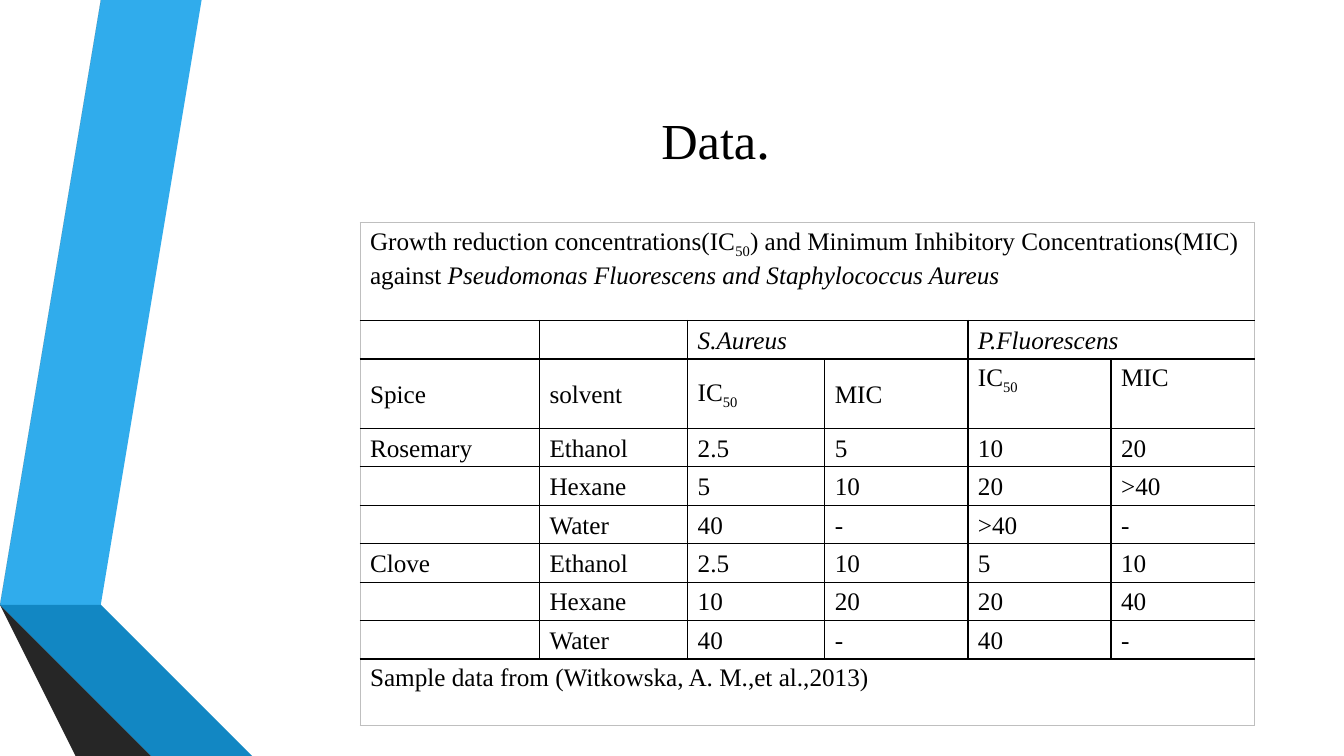
from lxml.etree import SubElement
from pptx import Presentation
from pptx.dml.color import RGBColor
from pptx.enum.text import MSO_ANCHOR as Anchor, PP_ALIGN as Align
from pptx.oxml.ns import qn
from pptx.util import Inches, Pt

BLACK = RGBColor(0x00, 0x00, 0x00)
EDGE_GREY = RGBColor(0xBF, 0xBF, 0xBF)
FONT = "Times New Roman"
PLAIN, SUB, ITALIC = "plain", "sub", "italic"

# Ribbon facets, back to front: colour and corners in inches
RIBBONS = [
    (RGBColor(0x30, 0xAC, 0xEC), [(0.5, 5.78), (0.77, 5.83), (1.73, 0), (1.45, 0)]),
    (RGBColor(0x59, 0x59, 0x59), [(1.39, 0), (1.11, 0), (0.16, 5.73), (0.44, 5.77)]),
    (RGBColor(0x26, 0x26, 0x26), [(0.16, 5.73), (1.45, 7.5), (1.51, 7.5)]),
    (RGBColor(0x0C, 0x5A, 0x82), [(0.5, 5.79), (2.08, 7.5), (2.14, 7.5)]),
    (RGBColor(0x12, 0x87, 0xC3), [(0.5, 5.78), (2.14, 7.5), (2.83, 7.5), (0.77, 5.83)]),
    (RGBColor(0x40, 0x40, 0x40), [(0.16, 5.73), (1.51, 7.5), (2.02, 7.5), (0.48, 5.83),
                                  (0.44, 5.77)]),
]

TITLE = [("Data", 36), (".", 40)]
TITLE_BOX = (1.62, 0.75, 10.96, 1.22)

CAPTION = [
    ("Growth reduction concentrations(IC", PLAIN), ("50", SUB),
    (") and Minimum Inhibitory Concentrations(MIC) against ", PLAIN),
    ("Pseudomonas Fluorescens and Staphylococcus Aureus", ITALIC),
]
IC50 = [("IC", PLAIN), ("50", SUB)]
ROWS = [
    [CAPTION, "", "", "", "", ""],
    ["", "", [("S.Aureus", ITALIC)], "", [("P.Fluorescens", ITALIC)], ""],
    ["Spice", "solvent", IC50, "MIC", IC50, "MIC"],
    ["Rosemary", "Ethanol", "2.5", "5", "10", "20"],
    ["", "Hexane", "5", "10", "20", ">40"],
    ["", "Water", "40", "-", ">40", "-"],
    ["Clove", "Ethanol", "2.5", "10", "5", "10"],
    ["", "Hexane", "10", "20", "20", "40"],
    ["", "Water", "40", "-", "40", "-"],
    ["Sample data from (Witkowska, A. M.,et al.,2013)", "", "", "", "", ""],
]
LAST_ROW, LAST_COL = len(ROWS) - 1, len(ROWS[0]) - 1
SPANS = [(0, 0, 5), (1, 2, 3), (1, 4, 5), (LAST_ROW, 0, 5)]  # row, first and last column
TOP_CELLS = {(0, 0), (2, 4), (2, 5), (LAST_ROW, 0)}
SPECIES_COL = 4  # a heavier rule divides the two species here

TABLE_LEFT, TABLE_TOP = 3.57, 2.21
COL_WIDTHS = [1.78, 1.47, 1.36, 1.42, 1.42, 1.42]
ROW_HEIGHTS = [0.97, 0.38, 0.69] + [0.38] * 6 + [0.66]


def add_run(paragraph, text, size, style=PLAIN):
    run = paragraph.add_run()
    run.text = text
    font = run.font
    font.name, font.size, font.color.rgb = FONT, Pt(size), BLACK
    font.italic = style == ITALIC
    if style == SUB:
        run._r.get_or_add_rPr().set("baseline", "-25000")


def add_ribbon(shapes, color, corners):
    builder = shapes.build_freeform(*corners[0], scale=Inches(1))
    builder.add_line_segments(corners[1:], close=True)
    ribbon = builder.convert_to_shape()
    ribbon.shadow.inherit = False
    ribbon.fill.solid()
    ribbon.fill.fore_color.rgb = color
    ribbon.line.fill.background()


def add_title(shapes):
    frame = shapes.add_textbox(*map(Inches, TITLE_BOX)).text_frame
    frame.word_wrap = True
    frame.vertical_anchor = Anchor.MIDDLE
    heading = frame.paragraphs[0]
    heading.alignment = Align.CENTER
    for text, size in TITLE:
        add_run(heading, text, size)


def set_borders(cell, row, col, right_col):
    """Grey hairlines on the table's outer edge, black rules inside."""
    outer = {"lnL": col == 0, "lnR": right_col == LAST_COL,
             "lnT": row == 0, "lnB": row == LAST_ROW}
    divider = {"lnL": col == SPECIES_COL, "lnR": right_col == SPECIES_COL - 1}
    properties = cell._tc.get_or_add_tcPr()
    for side, is_outer in outer.items():
        width = 0.75 if is_outer else 1.5 if divider.get(side) else 1
        line = SubElement(properties, qn("a:" + side), w=str(Pt(width)))
        fill = SubElement(line, qn("a:solidFill"))
        SubElement(fill, qn("a:srgbClr"), val=str(EDGE_GREY if is_outer else BLACK))


def add_data_table(shapes):
    table = shapes.add_table(
        len(ROWS), len(COL_WIDTHS), Inches(TABLE_LEFT), Inches(TABLE_TOP),
        Inches(sum(COL_WIDTHS)), Inches(sum(ROW_HEIGHTS))).table
    table.first_row = table.horz_banding = False
    for column, width in zip(table.columns, COL_WIDTHS):
        column.width = Inches(width)
    for table_row, height in zip(table.rows, ROW_HEIGHTS):
        table_row.height = Inches(height)
    for row, first, last in SPANS:
        table.cell(row, first).merge(table.cell(row, last))
    span_ends = {(row, first): last for row, first, last in SPANS}

    for row, entries in enumerate(ROWS):
        for col, entry in enumerate(entries):
            cell = table.cell(row, col)
            cell.margin_top = cell.margin_bottom = Inches(0.03)
            cell.vertical_anchor = Anchor.TOP if (row, col) in TOP_CELLS else Anchor.MIDDLE
            set_borders(cell, row, col, span_ends.get((row, col), col))
            cell.fill.background()
            paragraph = cell.text_frame.paragraphs[0]
            paragraph.line_spacing = 1.07
            pieces = [(entry, PLAIN)] if isinstance(entry, str) else entry
            for text, style in pieces:
                if text:
                    add_run(paragraph, text, 18, style)


def main():
    deck = Presentation()
    deck.slide_width, deck.slide_height = Inches(13.33), Inches(7.5)
    shapes = deck.slides.add_slide(deck.slide_layouts[6]).shapes
    for color, corners in RIBBONS:
        add_ribbon(shapes, color, corners)
    add_title(shapes)
    add_data_table(shapes)
    deck.save("out.pptx")


if __name__ == "__main__":
    main()
